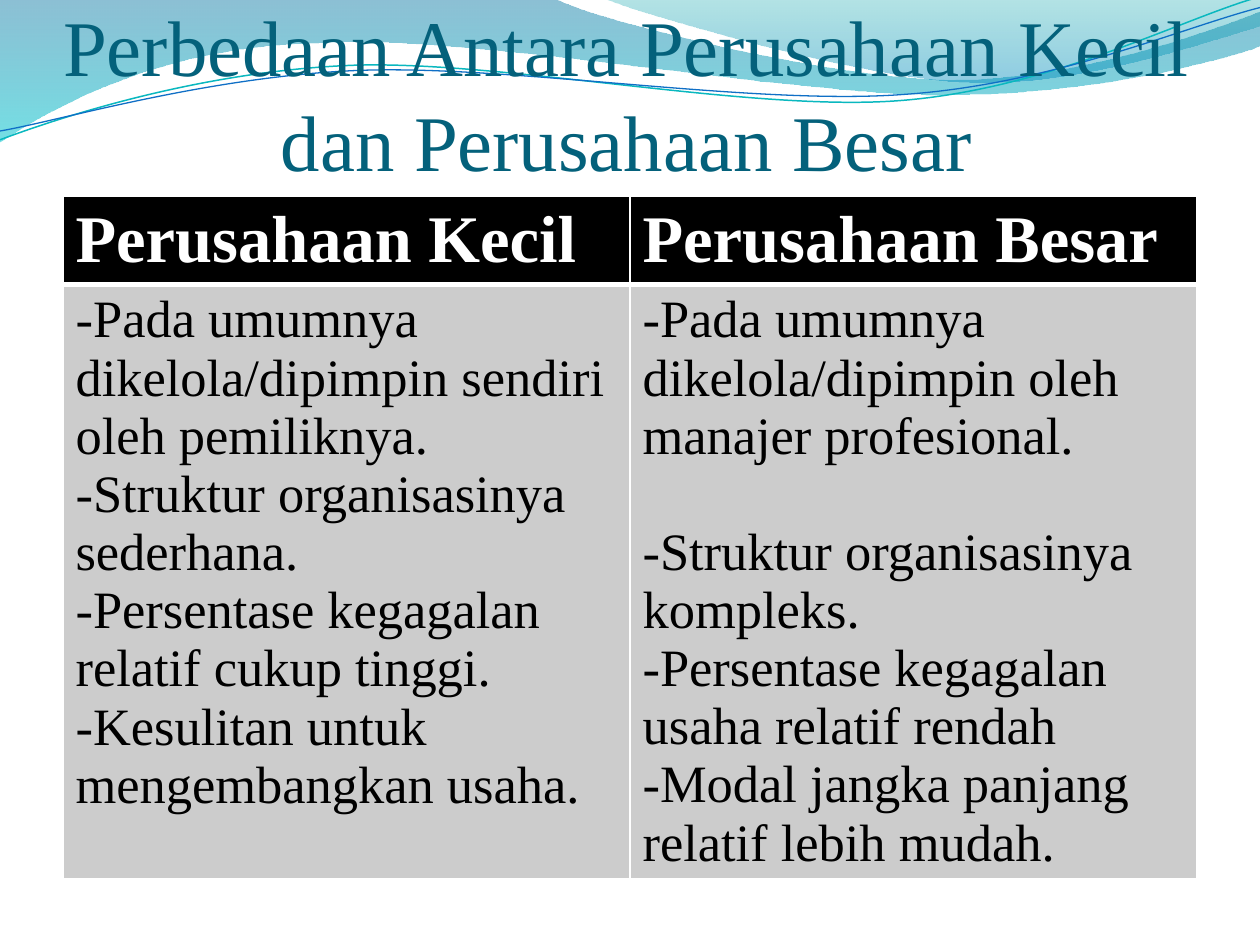
from pptx import Presentation
from pptx.dml.color import RGBColor
from pptx.enum.text import MSO_ANCHOR, MSO_AUTO_SIZE, PP_ALIGN
from pptx.oxml.ns import qn
from pptx.util import Inches, Pt
from lxml.etree import SubElement

FONT = "Times New Roman"
COLORS = {"title": "04617B", "head": "000000", "body": "CCCCCC", "ink": "000000",
          "white": "FFFFFF", "teal": "0AB8BF", "blue": "0F6FC6"}

TITLE = "Perbedaan Antara Perusahaan Kecil dan Perusahaan Besar"
HEADS = ["Perusahaan Kecil", "Perusahaan Besar"]
# Each point: text, dash drawn as bullet, space before in points
POINTS = [
    [("-Pada umumnya dikelola/dipimpin sendiri oleh pemiliknya.", False, 0),
     ("Struktur organisasinya sederhana.", True, 0),
     ("Persentase kegagalan relatif cukup tinggi.", True, 0),
     ("Kesulitan untuk mengembangkan usaha.", True, 0)],
    [("Pada umumnya dikelola/dipimpin oleh manajer profesional.", True, 0),
     ("Struktur organisasinya kompleks.", True, 33),
     ("Persentase kegagalan usaha relatif rendah", True, 0),
     ("Modal jangka panjang relatif lebih mudah.", True, 0)],
]

# Wave outlines: a pair is a corner, six numbers are a Bezier curve
BANDS = [
    ([(0, 0), (4.4, -0.01), (4.76, 0.17, 6.64, 0.63, 7.58, 0.63),
      (8.53, 0.63, 9.58, 0.26, 10, 0.09), (10.01, 0.36),
      (9.83, 0.44, 8.7, 0.76, 7.46, 0.75), (6.22, 0.75, 3.82, 0.28, 2.57, 0.34),
      (1.29, 0.36, 0.46, 0.83, -0.01, 1.13)],
     [("0074A1", 45), ("00C6CF", 55)]),
    ([(4.79, -0.01), (5.09, 0.11, 6.82, 0.62, 7.69, 0.65),
      (8.56, 0.69, 9.61, 0.32, 10, 0.21), (10, 0)],
     [("00A1A9", 30), ("008BBF", 45)]),
]
CURVES = [
    ([(0, 1.11), (0.48, 0.93, 1.58, 0.57, 2.77, 0.52),
      (3.95, 0.47, 5.93, 0.89, 7.13, 0.8), (8.33, 0.71, 9.38, 0.15, 9.98, -0.02)],
     "teal", 0.85),
    ([(0, 1.04), (0.47, 0.96, 1.64, 0.61, 2.83, 0.56),
      (4.03, 0.51, 5.97, 0.84, 7.17, 0.75), (8.36, 0.67, 9.41, 0.21, 10, 0.06)],
     "blue", 0.75),
]


def rgb(name):
    return RGBColor.from_string(COLORS[name])


def draw(shapes, segs, close):
    """Build the outline from all its points, then bend each triple into a curve."""
    pts = [(Inches(s[i]), Inches(s[i + 1])) for s in segs for i in range(0, len(s), 2)]
    pen = shapes.build_freeform(*pts[0])
    pen.add_line_segments(pts[1:], close=close)
    shape = pen.convert_to_shape()
    shape.shadow.inherit = False
    steps = iter(list(shape._element.iter(qn("a:lnTo"))))
    for seg in segs[1:]:
        first = next(steps)
        if len(seg) == 6:
            bend = first.makeelement(qn("a:cubicBezTo"), {})
            first.addprevious(bend)
            for step in (first, next(steps), next(steps)):
                bend.append(step[0])
                step.getparent().remove(step)
    return shape


def style(para, size, color, bold=False):
    look = {"name": FONT, "size": Pt(size), "bold": bold}
    for run in para.runs:
        for key, value in look.items():
            setattr(run.font, key, value)
        run.font.color.rgb = rgb(color)


def dash(para):
    props = para._p.get_or_add_pPr()
    props.set("marL", "0")
    props.set("indent", "0")
    SubElement(props, qn("a:buFont"), typeface=FONT)
    SubElement(props, qn("a:buChar"), char="-")


def paint(cell, fill, base):
    cell.fill.solid()
    cell.fill.fore_color.rgb = rgb(fill)
    props = cell._tc.get_or_add_tcPr()
    widths = {"lnL": 1, "lnR": 1, "lnT": 1, "lnB": base}
    for i, (tag, width) in enumerate(widths.items()):
        line = props.makeelement(qn("a:" + tag), {"w": str(Pt(width))})
        SubElement(SubElement(line, qn("a:solidFill")), qn("a:srgbClr"), val=COLORS["white"])
        props.insert(i, line)


def main():
    deck = Presentation()
    deck.slide_width, deck.slide_height = Inches(10), Inches(7.5)
    slide = deck.slides.add_slide(deck.slide_layouts[5])
    shapes = slide.shapes

    # Waves
    for segs, stops in BANDS:
        band = draw(shapes, segs, True)
        band.line.fill.background()
        band.fill.gradient()
        band.fill.gradient_angle = 270
        for stop, (color, _) in zip(band.fill.gradient_stops, stops):
            stop.color.rgb = RGBColor.from_string(color)
        marks = band._element.spPr.iter(qn("a:srgbClr"))
        for mark, (_, alpha) in zip(list(marks), stops):
            SubElement(mark, qn("a:alpha"), val=str(alpha * 1000))
    for segs, color, width in CURVES:
        curve = draw(shapes, segs, False)
        curve.fill.background()
        curve.line.color.rgb = rgb(color)
        curve.line.width = Pt(width)

    # Title, in front of the waves
    title = shapes.title
    shapes._spTree.append(title._element)
    title.left, title.top, title.width, title.height = map(Inches, (0.47, 0.24, 9, 1.25))
    frame = title.text_frame
    frame.text = TITLE
    form = {"margin_left": 0, "margin_right": 0, "margin_top": Inches(0.05),
            "margin_bottom": 0, "vertical_anchor": MSO_ANCHOR.BOTTOM,
            "word_wrap": True, "auto_size": MSO_AUTO_SIZE.NONE}
    for key, value in form.items():
        setattr(frame, key, value)
    para = frame.paragraphs[0]
    para.alignment = PP_ALIGN.CENTER
    para.line_spacing = Pt(54.5)
    style(para, 45, "title")

    # Table
    rows = [0.7, 4.7]
    grid = shapes.add_table(2, 2, Inches(0.5), Inches(1.56), Inches(9), Inches(sum(rows))).table
    for row, height in zip(grid.rows, rows):
        row.height = Inches(height)
    for col, (head, points) in enumerate(zip(HEADS, POINTS)):
        top, body = grid.cell(0, col), grid.cell(1, col)
        paint(top, "head", 3)
        paint(body, "body", 1)
        top.text = head
        style(top.text_frame.paragraphs[0], 38, "white", True)
        body.text = "\n".join(text for text, _, _ in points)
        for para, (_, mark, gap) in zip(body.text_frame.paragraphs, points):
            style(para, 30, "ink")
            para.space_before = Pt(gap)
            if mark:
                dash(para)

    deck.save("out.pptx")


if __name__ == "__main__":
    main()
